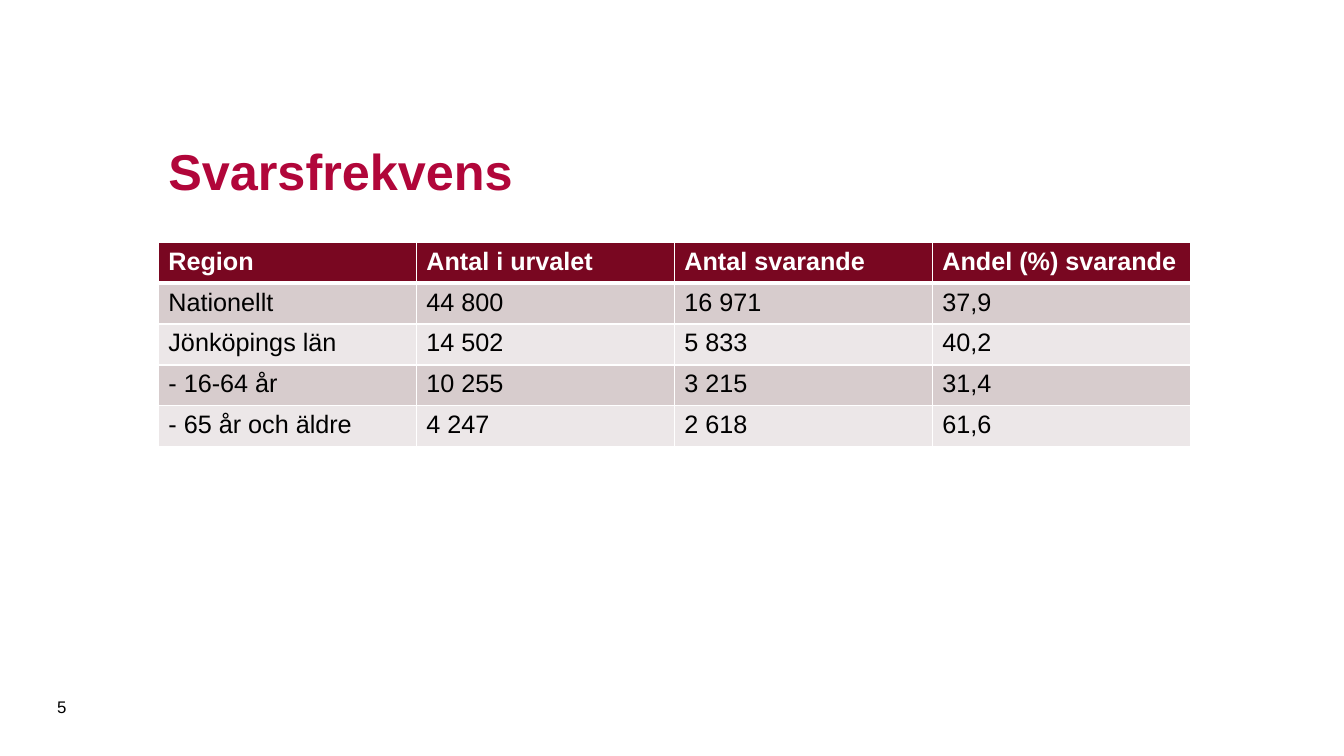
from dataclasses import dataclass

from lxml import etree
from pptx import Presentation
from pptx.dml.color import RGBColor
from pptx.enum import text as t
from pptx.oxml import ns
from pptx.util import Pt


@dataclass(frozen=True)
class Theme:
    font: str = "Arial"
    heading: str = "B1063A"
    header_fill: str = "790721"
    bands: tuple = ("D7CCCD", "ECE7E8")
    ink: str = "000000"
    white: str = "FFFFFF"
    title_size: int = 36
    table_size: int = 18
    number_size: int = 12


THEME = Theme()
LEFT, WIDTH = 113.1, 737.2
TABLE_TOP, ROW_HEIGHT = 173, 29.25
RESPONSES = [
    ("Region", "Antal i urvalet", "Antal svarande", "Andel (%) svarande"),
    ("Nationellt", "44 800", "16 971", "37,9"),
    ("Jönköpings län", "14 502", "5 833", "40,2"),
    ("- 16-64 år", "10 255", "3 215", "31,4"),
    ("- 65 år och äldre", "4 247", "2 618", "61,6"),
]


def write(frame, wording, *, size, color=THEME.ink, bold=False):
    run = frame.paragraphs[0].add_run()
    run.text = wording
    run.font.name = THEME.font
    run.font.size = Pt(size)
    run.font.bold = bold
    run.font.color.rgb = RGBColor.from_string(color)


def add_label(slide, wording, left, top, width, height, **style):
    label = slide.shapes.add_textbox(Pt(left), Pt(top), Pt(width), Pt(height))
    label.text_frame.word_wrap = True
    label.text_frame.vertical_anchor = t.MSO_ANCHOR.MIDDLE
    write(label.text_frame, wording, **style)


def add_borders(cell, **widths):
    properties = cell._tc.get_or_add_tcPr()
    for side in "LRTB":
        line = etree.SubElement(properties, ns.qn(f"a:ln{side}"), w=str(Pt(widths.get(side, 1))))
        fill = etree.SubElement(line, ns.qn("a:solidFill"))
        etree.SubElement(fill, ns.qn("a:srgbClr"), val=THEME.white)


def add_response_table(slide):
    table = slide.shapes.add_table(
        len(RESPONSES), len(RESPONSES[0]),
        Pt(LEFT), Pt(TABLE_TOP), Pt(WIDTH), Pt(ROW_HEIGHT * len(RESPONSES)),
    ).table
    for row, values in enumerate(RESPONSES):
        header = row == 0
        fill = THEME.header_fill if header else THEME.bands[(row - 1) % 2]
        borders = {0: {"B": 3}, 1: {"T": 3}}.get(row, {})
        for column, value in enumerate(values):
            cell = table.cell(row, column)
            add_borders(cell, **borders)
            cell.fill.solid()
            cell.fill.fore_color.rgb = RGBColor.from_string(fill)
            write(cell.text_frame, value, size=THEME.table_size, bold=header,
                  color=THEME.white if header else THEME.ink)


def main():
    deck = Presentation()
    deck.slide_width, deck.slide_height = Pt(960), Pt(540)
    slide = deck.slides.add_slide(deck.slide_layouts[6])
    add_response_table(slide)
    add_label(slide, "Svarsfrekvens", LEFT, 70.6, WIDTH, 102.2,
              size=THEME.title_size, color=THEME.heading, bold=True)
    add_label(slide, "5", 33.8, 490.3, 41, 28.8, size=THEME.number_size)
    deck.save("out.pptx")


if __name__ == "__main__":
    main()
